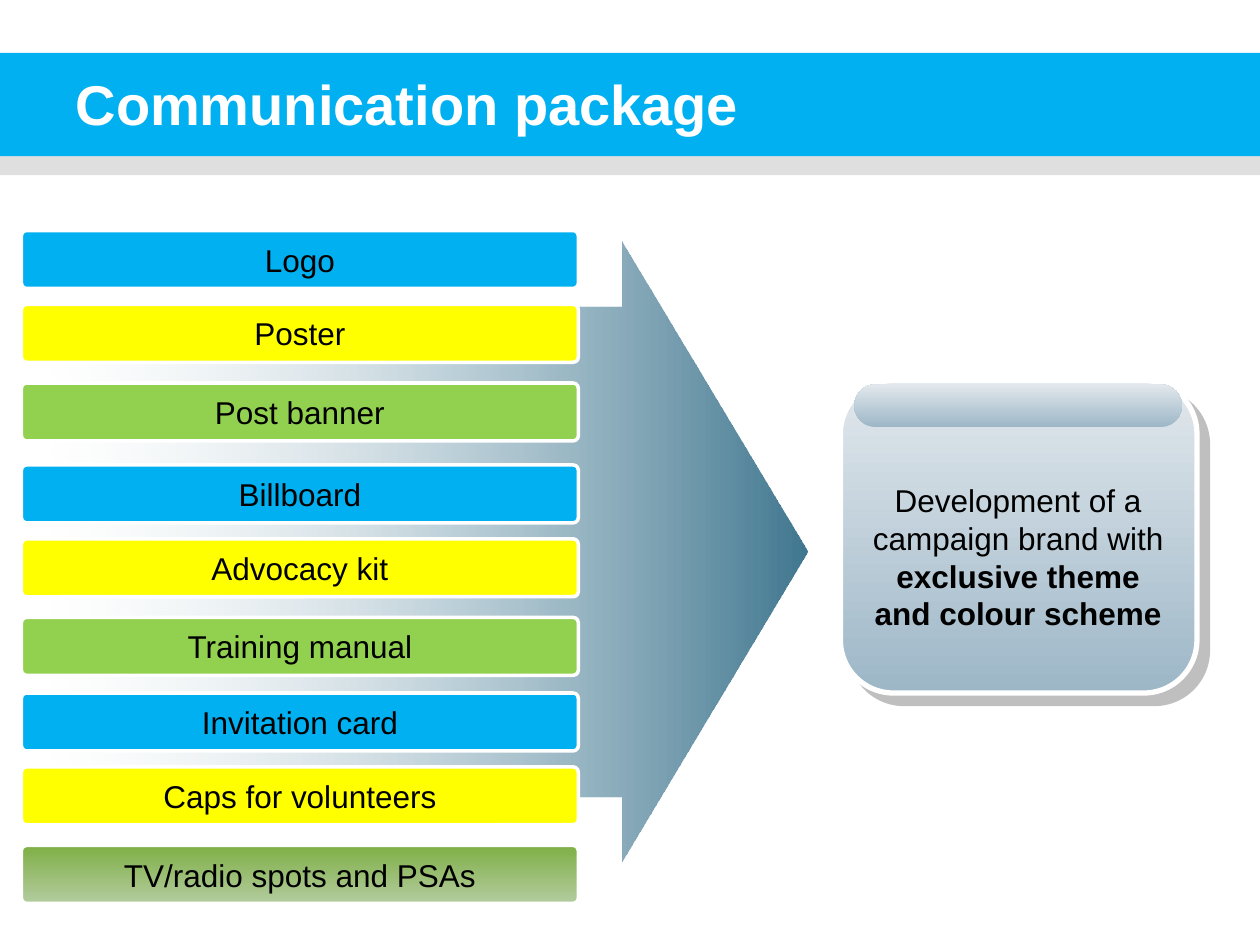
import dataclasses
import itertools
import pptx
import pptx.dml.color
import pptx.enum.shapes
import pptx.enum.text
import pptx.oxml
import pptx.oxml.ns
import pptx.util

KIND = pptx.enum.shapes.MSO_SHAPE
ALIGN = pptx.enum.text.PP_ALIGN
MID = pptx.enum.text.MSO_ANCHOR.MIDDLE
FIT = pptx.enum.text.MSO_AUTO_SIZE
TAG = pptx.oxml.ns.qn


@dataclasses.dataclass(frozen=True)
class Theme:
    font: str = "Arial"
    head: int = 32
    body: int = 18
    edge: int = 2
    rim: int = 3
    white: str = "FFFFFF"
    black: str = "000000"
    gray: str = "808080"
    blue: str = "00B0F0"
    gold: str = "FFFF00"
    green: str = "92D050"
    steel: str = "407790"
    moss: tuple = ("7FAF45", "B3CC9F")
    mist: tuple = ("9DB7C7", "E2E8ED")


@dataclasses.dataclass(frozen=True)
class Box:
    left: float
    top: float
    width: float
    height: float

    def share(self, x, y, w, h):
        return Box(self.left + self.width * x / 100, self.top + self.height * y / 100,
                   self.width * w / 100, self.height * h / 100)

    def spot(self):
        return [round(n) for n in (self.left, self.top, self.width, self.height)]


THEME = Theme()
TONES = (THEME.blue, THEME.gold, THEME.green)
ITEMS = ("Logo", "Poster", "Post banner", "Billboard", "Advocacy kit",
         "Training manual", "Invitation card", "Caps for volunteers",
         "TV/radio spots and PSAs")
SETS = (0, 34.9, 68.86)
STEPS = (0, 11.0, 22.7)
DOWN, UP = 270, 90


def shade(code):
    return pptx.dml.color.RGBColor.from_string(code)


def block(slide, box, kind, tone, turn=0, edge=0, bends=()):
    shape = slide.shapes.add_shape(kind, *box.spot())
    shape.shadow.inherit = False
    for place, bend in enumerate(bends):
        shape.adjustments[place] = bend
    if isinstance(tone, tuple):
        shape.fill.gradient()
        shape.fill.gradient_angle = turn
        for stop, code in zip(shape.fill.gradient_stops, tone):
            stop.color.rgb = shade(code)
    else:
        shape.fill.solid()
        shape.fill.fore_color.rgb = shade(tone)
    if edge:
        shape.line.color.rgb = shade(THEME.white)
        shape.line.width = pptx.util.Pt(edge)
    else:
        shape.line.fill.background()
    return shape


def thin(shape, amount):
    tint = shape.element.spPr.find(".//" + TAG("a:srgbClr"))
    alpha = tint.makeelement(TAG("a:alpha"), {"val": str(amount * 1000)})
    tint.append(alpha)


def drop(shape):
    space = pptx.oxml.ns.nsdecls("a")
    shape.element.spPr.find(TAG("a:effectLst")).append(pptx.oxml.parse_xml(
        f'<a:outerShdw {space} dist="107950" dir="2700000" algn="ctr" rotWithShape="0">'
        f'<a:srgbClr val="{THEME.gray}"><a:alpha val="50000"/></a:srgbClr></a:outerShdw>'))


def style(line, size, code, align, bold=False):
    line.alignment = align
    for run in line.runs:
        run.font.name = THEME.font
        run.font.size = pptx.util.Pt(size)
        run.font.color.rgb = shade(code)
        run.font.bold = bold


def banner(slide, box):
    strip = block(slide, box.share(0, 48.45, 100, 51.55), KIND.RECTANGLE, THEME.gray)
    thin(strip, 25)
    block(slide, box.share(0, 0, 100, 84.54), KIND.RECTANGLE, THEME.blue)
    title = slide.shapes.title
    title.left, title.top, title.width, title.height = box.share(5, 5.15, 75, 72.16).spot()
    frame = title.text_frame
    frame.text = "Communication package"
    frame.auto_size = FIT.NONE
    frame.vertical_anchor = MID
    style(frame.paragraphs[0], THEME.head, THEME.white, ALIGN.LEFT, True)
    title.element.getparent().append(title.element)


def arrow(slide, box):
    shape = block(slide, box, KIND.RIGHT_ARROW, (THEME.white, THEME.steel), bends=(0.79, 0.3))
    thin(shape, 24)


def stack(slide, box):
    spots = itertools.product(SETS, STEPS)
    for item, tone, (base, step) in zip(ITEMS, itertools.cycle(TONES), spots):
        if item == ITEMS[-1]:
            tone = THEME.moss
        bar = block(slide, box.share(0, base + step, 100, 8.63), KIND.ROUNDED_RECTANGLE,
                    tone, DOWN, THEME.edge, (0.09,))
        frame = bar.text_frame
        frame.text = item
        frame.word_wrap = False
        frame.vertical_anchor = MID
        style(frame.paragraphs[0], THEME.body, THEME.black, ALIGN.CENTER)


def panel(slide, box):
    card = block(slide, box, KIND.ROUNDED_RECTANGLE, THEME.mist, UP, THEME.rim, (0.17,))
    drop(card)
    block(slide, box.share(3.9, 1.2, 91.9, 13.7), KIND.ROUNDED_RECTANGLE,
          THEME.mist, UP, bends=(0.5,))
    note = slide.shapes.add_textbox(*box.share(3.9, 30.2, 91.9, 52.8).spot())
    frame = note.text_frame
    frame.word_wrap = True
    frame.auto_size = FIT.SHAPE_TO_FIT_TEXT
    line = frame.paragraphs[0]
    line.text = "Development of a campaign brand with "
    brand = line.add_run()
    brand.text = "exclusive theme and colour scheme"
    style(line, THEME.body, THEME.black, ALIGN.CENTER)
    brand.font.bold = True


def main():
    deck = pptx.Presentation()
    deck.slide_width = pptx.util.Inches(10)
    deck.slide_height = pptx.util.Inches(7.5)
    slide = deck.slides.add_slide(deck.slide_layouts[5])
    page = Box(0, 0, deck.slide_width, deck.slide_height)
    banner(slide, page.share(0, 5.6, 100, 12.93))
    arrow(slide, page.share(4, 25.6, 60.1, 65.6))
    stack(slide, page.share(1.7, 24.4, 44.2, 71.07))
    panel(slide, page.share(66.7, 40.27, 28.3, 33.07))
    deck.save("out.pptx")


if __name__ == "__main__":
    main()
